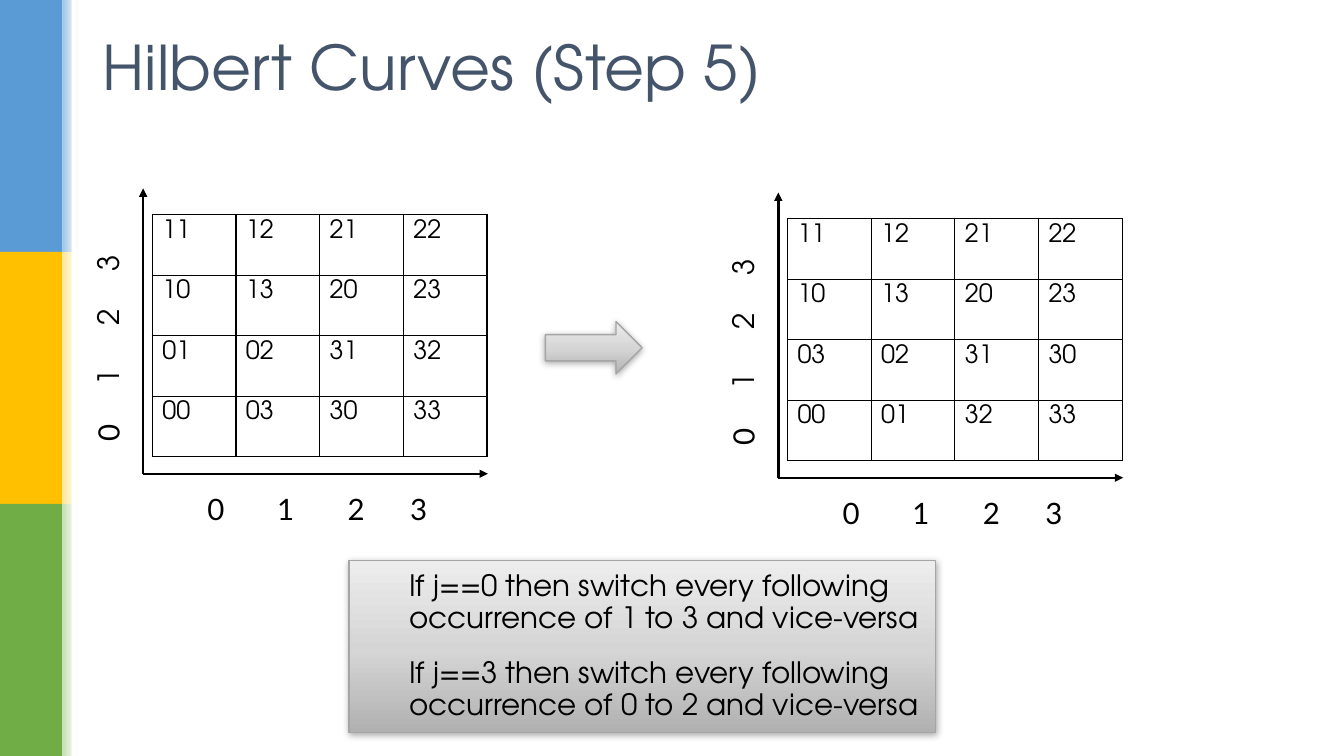
"""Build the Hilbert Curves (Step 5) slide."""
import pptx
import pptx.dml.color
import pptx.enum.shapes
import pptx.enum.text
import pptx.oxml
import pptx.oxml.ns
import pptx.util

Inches = pptx.util.Inches
Pt = pptx.util.Pt
RGBColor = pptx.dml.color.RGBColor
MSO_SHAPE = pptx.enum.shapes.MSO_SHAPE
MIDDLE = pptx.enum.text.MSO_ANCHOR.MIDDLE

TITLE = "Hilbert Curves (Step 5)"
RULES = [
    "If j==0 then switch every following occurrence of 1 to 3 and vice-versa",
    "If j==3 then switch every following occurrence of 0 to 2 and vice-versa",
]
PANELS = [
    ((7.72, 4.74), ["11 12 21 22", "10 13 20 23", "03 02 31 30", "00 01 32 33"]),
    ((1.42, 4.7), ["11 12 21 22", "10 13 20 23", "01 02 31 32", "00 03 30 33"]),
]
X_LABEL = [("0\t1\t2\t3", "Lato")]
X_TABS = [0.69, 1.39, 2.01]
Y_LABEL = [("\t0", "Lato"), ("\t1\t2\t3", "TeX Gyre Adventor")]
Y_TABS = [0.23, 0.78, 1.38, 1.91]

BLACK = RGBColor(0x00, 0x00, 0x00)
WHITE = RGBColor(0xFF, 0xFF, 0xFF)
SLATE = RGBColor(0x44, 0x54, 0x6A)
GREY = RGBColor(0xA5, 0xA5, 0xA5)
BANDS = [
    (RGBColor(0x5B, 0x9B, 0xD5), RGBColor(0x9D, 0xC3, 0xE6)),
    (RGBColor(0xFF, 0xC0, 0x00), RGBColor(0xFF, 0xE6, 0x99)),
    (RGBColor(0x70, 0xAD, 0x47), RGBColor(0xC5, 0xE0, 0xB4)),
]
SILVER = [
    (0, RGBColor(0xB1, 0xB1, 0xB1)),
    (48, RGBColor(0xD5, 0xD5, 0xD5)),
    (100, RGBColor(0xED, 0xED, 0xED)),
]

COLUMN, ROW, BAND = 0.83, 0.6, 2.5


def make_xml(tag, body="", **attributes):
    listed = "".join(f' {name}="{value}"' for name, value in attributes.items())
    namespace = pptx.oxml.ns.nsdecls("a")
    return pptx.oxml.parse_xml(f"<a:{tag} {namespace}{listed}>{body}</a:{tag}>")


def write(paragraph, text, *, size, font="TeX Gyre Adventor", color=BLACK):
    run = paragraph.add_run()
    run.text = text
    run.font.size = Pt(size)
    run.font.name = font
    run.font.color.rgb = color


def add_block(slide, kind, left, top, width, height, fill=None, stops=None, angle=0):
    block = slide.shapes.add_shape(
        kind, Inches(left), Inches(top), Inches(width), Inches(height))
    block.shadow.inherit = False
    block.line.fill.background()
    if stops:
        marks = "".join(f'<a:gs pos="{place * 1000}"><a:srgbClr val="{color}"/></a:gs>'
                        for place, color in stops)
        body = f'<a:gsLst>{marks}</a:gsLst><a:lin ang="{angle * 60000}" scaled="0"/>'
        block.element.spPr.insert(2, make_xml("gradFill", body, rotWithShape=1))
    else:
        block.fill.solid()
        block.fill.fore_color.rgb = fill
    return block


def add_silver(slide, kind, *box):
    block = add_block(slide, kind, *box, stops=SILVER, angle=270)
    block.line.color.rgb = GREY
    block.line.width = Pt(1)
    effects = block.element.spPr.find(pptx.oxml.ns.qn("a:effectLst"))
    effects.append(make_xml(
        "outerShdw", '<a:srgbClr val="000000"><a:alpha val="32000"/></a:srgbClr>',
        blurRad=Pt(5), dist=Pt(1), dir=90 * 60000, rotWithShape=0))
    return block


def add_axis(slide, start, end):
    axis = slide.shapes.add_connector(
        pptx.enum.shapes.MSO_CONNECTOR.STRAIGHT, *map(Inches, start + end))
    axis.line.color.rgb = BLACK
    axis.line.width = Pt(1.75)
    axis.line._get_or_add_ln().append(make_xml("tailEnd", type="triangle"))
    axis._element.spPr.append(make_xml("effectLst"))


def add_axis_label(slide, left, top, parts, tabs, rotation):
    label = add_block(slide, MSO_SHAPE.RECTANGLE, left, top, 2.67, 0.5, WHITE)
    label.rotation = rotation
    label.text_frame.word_wrap = True
    label.text_frame.vertical_anchor = pptx.enum.text.MSO_ANCHOR.TOP
    paragraph = label.text_frame.paragraphs[0]
    paragraph.alignment = pptx.enum.text.PP_ALIGN.LEFT
    stops = "".join(f'<a:tab pos="{Inches(tab)}" algn="l"/>' for tab in tabs)
    paragraph._p.get_or_add_pPr().append(make_xml("tabLst", stops))
    for text, font in parts:
        write(paragraph, text, size=21, font=font)


def add_grid(slide, left, top, rows):
    count = len(rows)
    grid = slide.shapes.add_table(
        count, count, Inches(left), Inches(top),
        Inches(COLUMN * count), Inches(ROW * count)).table
    for index, row in enumerate(rows):
        grid.columns[index].width = Inches(COLUMN)
        grid.rows[index].height = Inches(ROW)
        for column, code in enumerate(row.split()):
            cell = grid.cell(index, column)
            write(cell.text_frame.paragraphs[0], code, size=18)
            properties = cell._tc.get_or_add_tcPr()
            for side in ("lnL", "lnR", "lnT", "lnB"):
                properties.append(make_xml(
                    side, '<a:solidFill><a:srgbClr val="000000"/></a:solidFill>',
                    w=Pt(1)))
            cell.fill.solid()
            cell.fill.fore_color.rgb = WHITE


def add_panel(slide, origin, rows):
    x, y = origin
    add_grid(slide, x + 0.09, y - 2.57, rows)
    add_axis(slide, origin, (x + 3.42, y))
    add_axis(slide, origin, (x, y - 2.83))
    add_axis_label(slide, x + 0.54, y + 0.12, X_LABEL, X_TABS, 0)
    add_axis_label(slide, x - 1.66, y - 1.58, Y_LABEL, Y_TABS, 270)


def main():
    deck = pptx.Presentation()
    deck.slide_width, deck.slide_height = Inches(13.33), Inches(7.5)
    slide = deck.slides.add_slide(deck.slide_layouts[6])

    for index, (solid, pale) in enumerate(BANDS):
        top = index * BAND
        add_block(slide, MSO_SHAPE.RECTANGLE, 0, top, 0.62, BAND, solid)
        add_block(slide, MSO_SHAPE.RECTANGLE, 0.62, top, 0.16, BAND,
                  stops=[(0, pale), (100, WHITE)])
    add_block(slide, MSO_SHAPE.RECTANGLE, 0.71, 0, 0.05, 7.5, WHITE)

    title = slide.shapes.add_textbox(
        Inches(0.92), Inches(0.15), Inches(11.5), Inches(1.1)).text_frame
    title.word_wrap = True
    title.vertical_anchor = MIDDLE
    title.paragraphs[0].line_spacing = 0.9
    write(title.paragraphs[0], TITLE, size=44, color=SLATE)

    for origin, rows in PANELS:
        add_panel(slide, origin, rows)

    rules = add_silver(slide, MSO_SHAPE.RECTANGLE, 3.46, 5.56, 5.82, 1.71).text_frame
    rules.word_wrap = True
    rules.vertical_anchor = MIDDLE
    for index, rule in enumerate(RULES):
        paragraph = rules.add_paragraph() if index else rules.paragraphs[0]
        paragraph.alignment = pptx.enum.text.PP_ALIGN.LEFT
        paragraph.line_spacing = 0.9
        if index:
            paragraph.space_before = Pt(16.5)
        paragraph._p.get_or_add_pPr().set("marL", str(Inches(0.5)))
        write(paragraph, rule, size=21)

    add_silver(slide, MSO_SHAPE.RIGHT_ARROW, 5.41, 3.19, 0.96, 0.52)
    deck.save("out.pptx")


if __name__ == "__main__":
    main()
